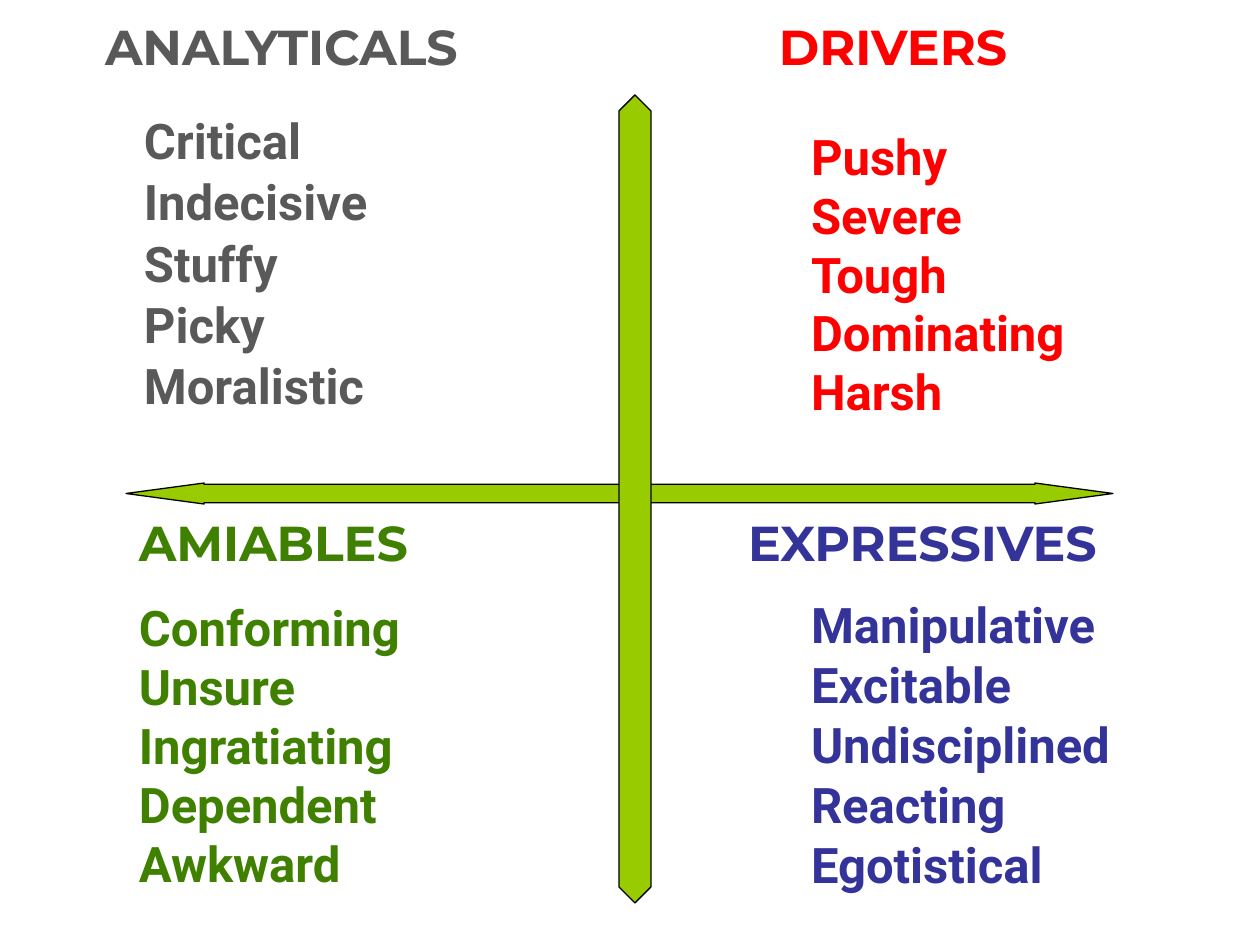
import pptx
import pptx.util
import pptx.dml.color
import pptx.enum.shapes
import pptx.enum.text

PX = 914400 / 126
ANCHOR = pptx.enum.text.MSO_ANCHOR
ARROW = pptx.enum.shapes.MSO_SHAPE


def color(value):
    return pptx.dml.color.RGBColor.from_string(value)


def add_text(slide, box, lines, font, fill, margin=13, anchor=ANCHOR.TOP, spacing=None):
    shape = slide.shapes.add_textbox(*[round(n * PX) for n in box])
    frame = shape.text_frame
    frame_format = {"word_wrap": True, "vertical_anchor": anchor,
                    "margin_left": round(margin * PX)}
    for name, value in frame_format.items():
        setattr(frame, name, value)
    frame.text = "\n".join(lines)
    for paragraph in frame.paragraphs:
        for name, value in (spacing or {}).items():
            setattr(paragraph, name, value)
        font_format = {"name": font, "size": pptx.util.Pt(28), "bold": True}
        for name, value in font_format.items():
            setattr(paragraph.runs[0].font, name, value)
        paragraph.runs[0].font.color.rgb = color(fill)


presentation = pptx.Presentation()
presentation.slide_width = round(1260 * PX)
presentation.slide_height = round(945 * PX)
slide = presentation.slides.add_slide(presentation.slide_layouts[6])

# Axes: horizontal first, vertical on top
axes = [
    (ARROW.LEFT_RIGHT_ARROW, (126, 483, 987, 21), 3.72),
    (ARROW.UP_DOWN_ARROW, (619, 95, 32, 808), 2.03),
]
for kind, box, head in axes:
    axis = slide.shapes.add_shape(kind, *[round(n * PX) for n in box])
    axis.adjustments[0] = 0.875
    axis.adjustments[1] = head
    axis.shadow.inherit = False
    axis.fill.solid()
    axis.fill.fore_color.rgb = color("99CC00")
    axis.line.color.rgb = color("000000")
    axis.line.width = pptx.util.Pt(0.75)

# Quadrants: heading, its box, colour, traits, their box, anchor, spacing
quadrants = [
    ("ANALYTICALS", (92, 10, 411, 72), "595959",
     ["Critical", "Indecisive", "Stuffy", "Picky", "Moralistic"],
     (5, 111, 630, 315), ANCHOR.TOP,
     {"line_spacing": 0.9, "space_before": pptx.util.Pt(4.8)}),
    ("DRIVERS", (766, 10, 305, 82), "FF0000",
     ["Pushy", "Severe", "Tough", "Dominating", "Harsh"],
     (672, 116, 588, 315), ANCHOR.MIDDLE, None),
    ("AMIABLES", (126, 506, 399, 82), "408000",
     ["Conforming", "Unsure", "Ingratiating", "Dependent", "Awkward"],
     (0, 577, 630, 336), ANCHOR.MIDDLE, None),
    ("EXPRESSIVES", (735, 506, 462, 82), "333399",
     ["Manipulative", "Excitable", "Undisciplined", "Reacting", "Egotistical"],
     (672, 588, 588, 357), ANCHOR.TOP, {"space_before": pptx.util.Pt(0.7)}),
]
for heading, heading_box, fill, traits, traits_box, anchor, spacing in quadrants:
    add_text(slide, heading_box, [heading], "Montserrat", fill)
    add_text(slide, traits_box, traits, "Roboto", fill, 139, anchor, spacing)

presentation.save("out.pptx")
